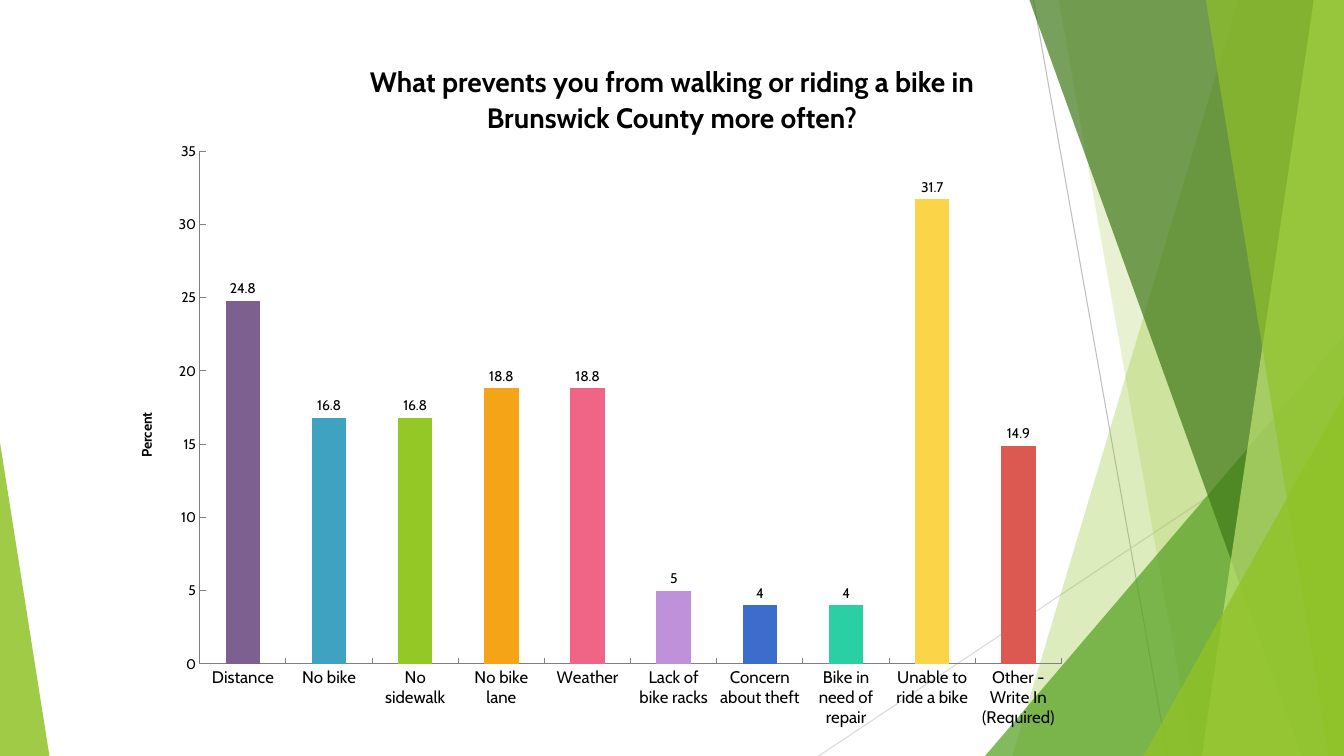
from lxml.etree import SubElement
from pptx import Presentation
from pptx.chart.data import CategoryChartData
from pptx.dml.color import RGBColor
from pptx.enum.chart import XL_CHART_TYPE, XL_LABEL_POSITION, XL_TICK_MARK
from pptx.enum.shapes import MSO_CONNECTOR, MSO_SHAPE
from pptx.enum.text import PP_ALIGN
from pptx.oxml import parse_xml
from pptx.oxml.ns import nsdecls, qn
from pptx.util import Inches, Pt

W, H = 13.33, 7.5
FONT = "Cabin"
TITLE = "What prevents you from walking or riding a bike in Brunswick County more often?"
BARS = [
    ("Distance", 24.8, "7C608F"),
    ("No bike", 16.8, "40A2C1"),
    ("No sidewalk", 16.8, "94C826"),
    ("No bike lane", 18.8, "F5A417"),
    ("Weather", 18.8, "F06485"),
    ("Lack of bike racks", 5, "BF91DB"),
    ("Concern about theft", 4, "3C6DCD"),
    ("Bike in need of repair", 4, "2ACFA3"),
    ("Unable to ride a bike", 31.7, "FCD448"),
    ("Other - Write In (Required)", 14.9, "DB5951"),
]
RAYS = [((10.25, 0), (11.58, H), "BFBFBF"), ((W, 4.03), (8.12, H), "D9D9D9")]
# kind, then left edge at top and bottom (band) or left, top, width, apex (peak), colour, opacity
FACETS = [
    ("band", (12.28, 10.04), "90C226", 30),
    ("band", (10.5, 11.83), "90C226", 20),
    ("peak", (9.77, 3.33, 3.56, 1), "54A021", 72),
    ("band", (10.21, 12.91), "3F7819", 70),
    ("band", (13.03, 11.92), "C0E474", 70),
    ("band", (11.96, 13.18), "90C226", 65),
    ("peak", (11.34, 3.93, 1.99, 1), "90C226", 80),
    ("peak", (0, 4.39, 0.49, 0), "90C226", 85),
]
CHART = (1.16, 1.3, 9.56, 6.05)
PLOT = {"x": 0.086, "y": 0.033, "w": 0.894, "h": 0.841}


def rgb(c):
    return RGBColor.from_string(c)


def style(font, size, bold=False):
    font.name, font.size, font.bold = FONT, Pt(size), bold
    font.color.rgb = rgb("000000")


def add_ray(s, start, end, color):
    ray = s.shapes.add_connector(MSO_CONNECTOR.STRAIGHT, *map(Inches, start + end))
    ray.line.color.rgb, ray.line.width = rgb(color), Pt(0.75)
    SubElement(ray._element.spPr, qn("a:effectLst"))


def add_facet(s, kind, place, color, opacity):
    if kind == "band":
        top, bottom = place
        corners = [(W, 0), (W, H), (bottom, H)]
        fb = s.shapes.build_freeform(Inches(top), 0)
        fb.add_line_segments([tuple(map(Inches, c)) for c in corners])
        sp = fb.convert_to_shape()
    else:
        x, y, w, apex = place
        box = map(Inches, (x, y, w, H - y))
        sp = s.shapes.add_shape(MSO_SHAPE.ISOSCELES_TRIANGLE, *box)
        sp.adjustments[0] = apex
    sp.shadow.inherit = False
    sp.line.fill.background()
    sp.fill.solid()
    sp.fill.fore_color.rgb = rgb(color)
    clr = sp._element.spPr.find(".//" + qn("a:srgbClr"))
    SubElement(clr, qn("a:alpha"), val=str(opacity * 1000))


def add_bars(s):
    data = CategoryChartData()
    data.categories = [name for name, _, _ in BARS]
    data.add_series("Series 1", [value for _, value, _ in BARS])
    kind = XL_CHART_TYPE.COLUMN_CLUSTERED
    chart = s.shapes.add_chart(kind, *map(Inches, CHART), data).chart
    chart.has_legend = chart.has_title = False
    style(chart.font, 10)

    for axis, size in ((chart.category_axis, 12), (chart.value_axis, 10)):
        axis.has_major_gridlines = False
        axis.major_tick_mark = XL_TICK_MARK.INSIDE
        axis.minor_tick_mark = XL_TICK_MARK.NONE
        axis.format.line.color.rgb = rgb("808080")
        style(axis.tick_labels.font, size)
    axis = chart.value_axis
    axis.minimum_scale, axis.maximum_scale, axis.major_unit = 0, 35, 5
    p = axis.axis_title.text_frame.paragraphs[0]
    p.text = "Percent"
    style(p.font, 10, True)

    plot = chart.plots[0]
    plot.gap_width, plot.overlap, plot.vary_by_categories = 150, 100, False
    plot.has_data_labels = True
    labels = plot.data_labels
    labels.show_value = True
    labels.position = XL_LABEL_POSITION.OUTSIDE_END
    style(labels.font, 10)
    for i, (_, _, color) in enumerate(BARS):
        fill = plot.series[0].points[i].format.fill
        fill.solid()
        fill.fore_color.rgb = rgb(color)

    area = chart._chartSpace.chart.plotArea
    for old in area.findall(qn("c:layout")):
        area.remove(old)
    sizes = "".join(f'<c:{k} val="{v}"/>' for k, v in PLOT.items())
    area.insert(0, parse_xml(
        f'<c:layout {nsdecls("c")}><c:manualLayout><c:layoutTarget val="inner"/>'
        f'<c:xMode val="edge"/><c:yMode val="edge"/>{sizes}</c:manualLayout></c:layout>'))


def add_title(s):
    box = map(Inches, (W / 4, 0.57, W / 2, 0.8))
    tf = s.shapes.add_textbox(*box).text_frame
    tf.word_wrap = True
    p = tf.paragraphs[0]
    p.text, p.alignment = TITLE, PP_ALIGN.CENTER
    p.line_spacing, p.space_after = 1.07, Pt(8)
    style(p.font, 20, True)


def main():
    """Build the survey slide with its faceted backdrop and bar chart."""
    prs = Presentation()
    prs.slide_width, prs.slide_height = Inches(W), Inches(H)
    s = prs.slides.add_slide(prs.slide_layouts[6])
    for ray in RAYS:
        add_ray(s, *ray)
    for facet in FACETS:
        add_facet(s, *facet)
    add_bars(s)
    add_title(s)
    prs.save("out.pptx")


if __name__ == "__main__":
    main()
